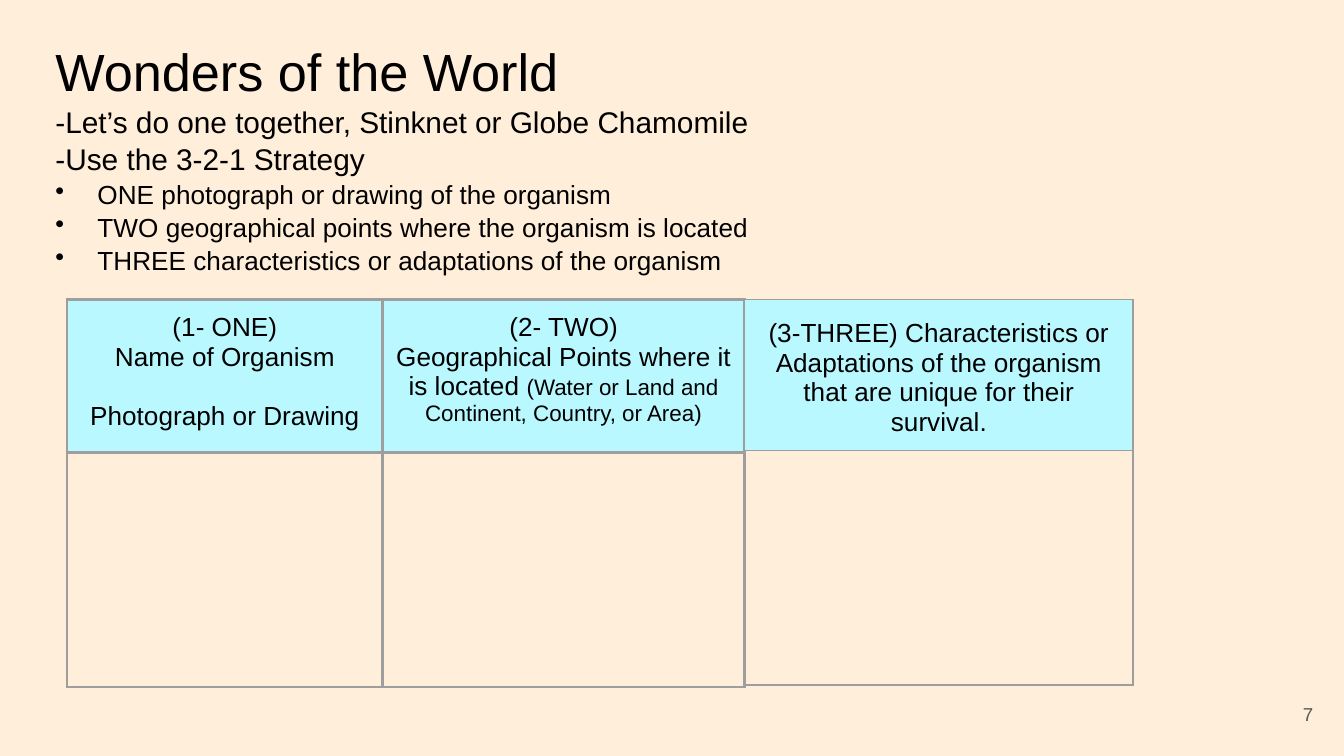
from dataclasses import dataclass

from lxml.etree import SubElement
from pptx import Presentation
from pptx.dml.color import RGBColor as RGB
from pptx.enum.text import MSO_ANCHOR as Anchor, MSO_AUTO_SIZE as Fit, PP_ALIGN as Align
from pptx.oxml.ns import qn
from pptx.util import Pt


@dataclass(frozen=True)
class Theme:
    """Hold the colours, font and type sizes of the slide."""
    page: str = "FFEED9"
    head: str = "BAF8FF"
    rule: str = "9E9E9E"
    ink: str = "000000"
    grey: str = "595959"
    font: str = "Arial"
    title: int = 28
    lead: int = 16
    body: int = 14
    small: int = 12
    num: int = 10


LOOK = Theme()
PAD = 7.2


def write(para, text, size=LOOK.body, color=LOOK.ink, align=Align.LEFT, before=0, space=None):
    """Add a formatted run to a paragraph."""
    para.alignment = align
    para.space_before = Pt(before)
    if space:
        para.line_spacing = space
    run = para.add_run()
    run.text = text
    font = run.font
    font.name, font.size = LOOK.font, Pt(size)
    font.color.rgb = RGB.from_string(color)


def inset(frame, top=PAD, foot=PAD):
    """Set the inner margins of a text frame or cell."""
    frame.margin_left = frame.margin_right = Pt(PAD)
    frame.margin_top, frame.margin_bottom = Pt(top), Pt(foot)


def bullet(para):
    """Give a paragraph a hanging black bullet."""
    props = para._p.get_or_add_pPr()
    props.set("marL", str(Pt(22.5)))
    props.set("indent", str(Pt(-22.5)))
    tint = SubElement(props, qn("a:buClr"))
    SubElement(tint, qn("a:srgbClr"), val=LOOK.ink)
    SubElement(props, qn("a:buChar"), char="•")


def place(shape, box):
    """Move a shape to a box."""
    shape.left, shape.top, shape.width, shape.height = map(Pt, box)


def add_title(slide, box):
    """Fill the title with its heading, lead lines and bullets."""
    shape = slide.shapes.title
    place(shape, box)
    frame = shape.text_frame
    frame.word_wrap, frame.auto_size = True, Fit.NONE
    frame.vertical_anchor = Anchor.TOP
    inset(frame)
    para = frame.paragraphs[0]
    write(para, "Wonders of the World", size=LOOK.title, space=1.05)
    gap = para._p.add_br()
    SubElement(gap, qn("a:rPr"), sz=str(LOOK.title * 100))
    write(para, "-Let’s do one together, Stinknet or Globe Chamomile", size=LOOK.lead)
    write(frame.add_paragraph(), "-Use the 3-2-1 Strategy", size=LOOK.lead, space=1.05)
    for text in ("ONE photograph or drawing of the organism",
                 "TWO geographical points where the organism is located",
                 "THREE characteristics or adaptations of the organism"):
        para = frame.add_paragraph()
        write(para, text, space=1.05)
        bullet(para)


def edge(cell, width):
    """Draw the four borders of a cell."""
    props = cell._tc.get_or_add_tcPr()
    for side in ("a:lnL", "a:lnR", "a:lnT", "a:lnB"):
        line = SubElement(props, qn(side), w=str(Pt(width)))
        fill = SubElement(line, qn("a:solidFill"))
        SubElement(fill, qn("a:srgbClr"), val=LOOK.rule)


def add_grid(slide, box, cols, rows, heads, line, top=PAD, foot=PAD):
    """Add a table with a filled head row above an empty row."""
    grid = slide.shapes.add_table(len(rows), len(cols), *map(Pt, box)).table
    grid.first_row = grid.horz_banding = False
    for col, width in zip(grid.columns, cols):
        col.width = Pt(width)
    for row, height in zip(grid.rows, rows):
        row.height = Pt(height)
    for cell in grid.iter_cells():
        edge(cell, line)
        cell.fill.background()
    for spot, paras in enumerate(heads):
        cell = grid.cell(0, spot)
        cell.fill.solid()
        cell.fill.fore_color.rgb = RGB.from_string(LOOK.head)
        inset(cell, top, foot)
        frame = cell.text_frame
        for rank, (before, runs) in enumerate(paras):
            para = frame.add_paragraph() if rank else frame.paragraphs[0]
            for text, size in runs:
                write(para, text, size=size, align=Align.CENTER, before=before)


def add_chart_grids(slide, box):
    """Set the two tables side by side in the box."""
    left, top, width, height = box
    cols, blank = (169, 194), 125.5
    mid = sum(cols)
    body = LOOK.body
    one = [(0, [("(1- ONE)", body)]), (0, [("Name of Organism", body)]),
           (16, [("Photograph or Drawing", body)])]
    two = [(0, [("(2- TWO)", body)]),
           (0, [("Geographical Points where it is located ", body),
                ("(Water or Land and Continent, Country, or Area)", LOOK.small)])]
    three = [(0, [("(3-THREE) Characteristics or Adaptations of the organism "
                   "that are unique for their survival.", body)])]
    add_grid(slide, (left, top, mid, height), cols, (height - blank, blank), (one, two), 1.5)
    rest = width - mid
    add_grid(slide, (left + mid, top, rest, height - 1), (rest,),
             (height - 1 - blank, blank), (three,), 0.75, top=10.5, foot=3.6)


def add_number(slide, box):
    """Add the page number."""
    frame = slide.shapes.add_textbox(*map(Pt, box)).text_frame
    frame.word_wrap, frame.vertical_anchor = True, Anchor.MIDDLE
    inset(frame)
    write(frame.paragraphs[0], "7", size=LOOK.num, color=LOOK.grey, align=Align.RIGHT)


def main():
    """Build and save the slide."""
    deck = Presentation()
    deck.slide_width, deck.slide_height = Pt(720), Pt(405)
    slide = deck.slides.add_slide(deck.slide_layouts[5])
    back = slide.background.fill
    back.solid()
    back.fore_color.rgb = RGB.from_string(LOOK.page)
    add_title(slide, (22.5, 12, 671, 145.5))
    add_chart_grids(slide, (36, 160.5, 571, 207.5))
    add_number(slide, (667.5, 367, 43, 31))
    deck.save("out.pptx")


if __name__ == "__main__":
    main()
